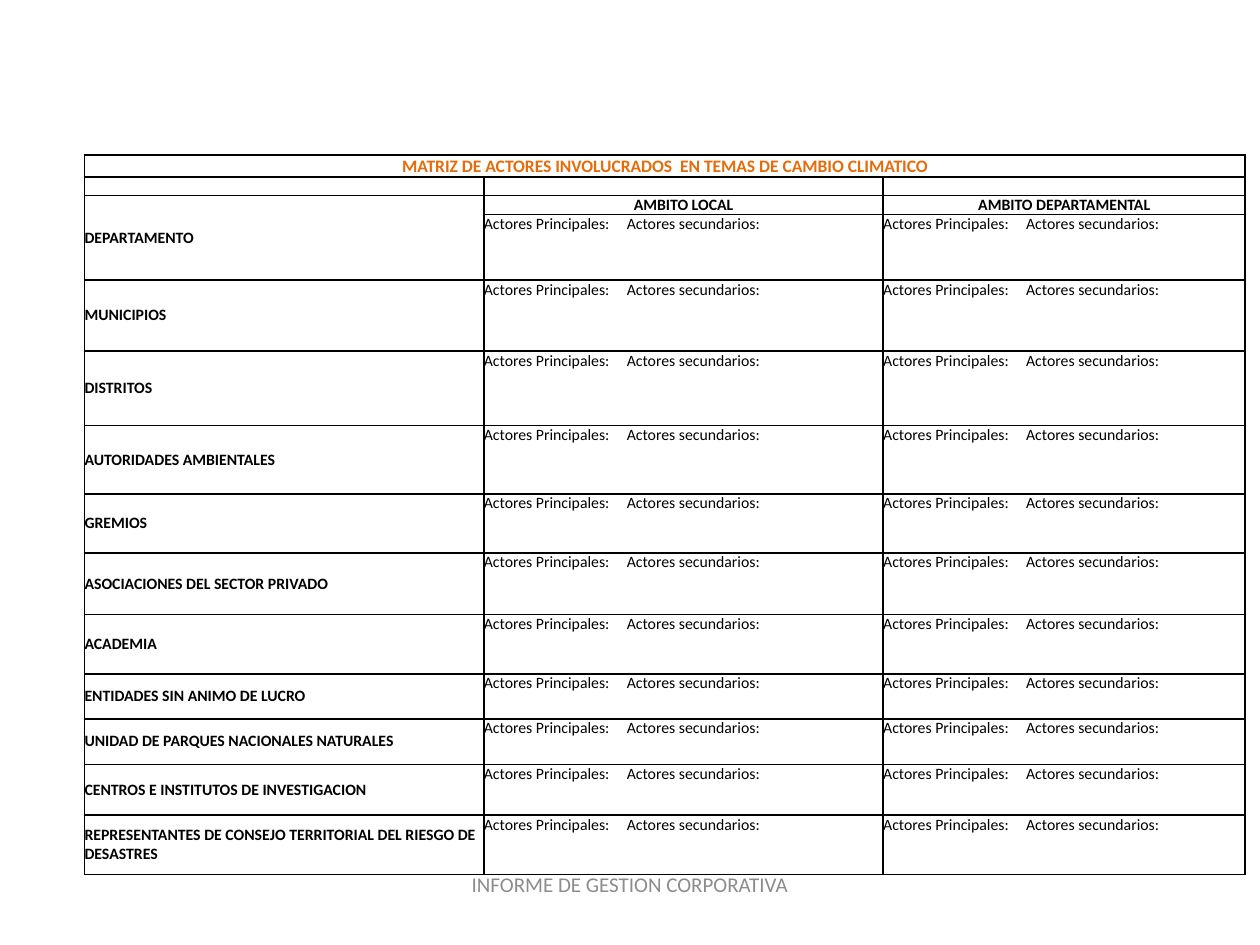
from lxml import etree
from pptx import Presentation
from pptx.dml.color import RGBColor
from pptx.enum.text import MSO_ANCHOR, PP_ALIGN
from pptx.oxml.ns import qn
from pptx.util import Pt

TOP, MIDDLE, BOTTOM = MSO_ANCHOR.TOP, MSO_ANCHOR.MIDDLE, MSO_ANCHOR.BOTTOM
LEFT, CENTER = PP_ALIGN.LEFT, PP_ALIGN.CENTER
COLORS = {"title": "E46C0A", "text": "000000", "border": "000000", "footer": "8C8C8C"}
FONT = "Calibri"

TITLE = "MATRIZ DE ACTORES INVOLUCRADOS  EN TEMAS DE CAMBIO CLIMATICO"
SCOPES = ["AMBITO LOCAL", "AMBITO DEPARTAMENTAL"]
ACTORS = "Actores Principales:\tActores secundarios:"
FOOTER = "INFORME DE GESTION CORPORATIVA"
GROUPS = [  # name, row height
    ("DEPARTAMENTO", 37.4),
    ("MUNICIPIOS", 40.6),
    ("DISTRITOS", 42.6),
    ("AUTORIDADES AMBIENTALES", 39.1),
    ("GREMIOS", 33.7),
    ("ASOCIACIONES DEL SECTOR PRIVADO", 35.1),
    ("ACADEMIA", 34),
    ("ENTIDADES SIN ANIMO DE LUCRO", 25.7),
    ("UNIDAD DE PARQUES NACIONALES NATURALES", 26),
    ("CENTROS E INSTITUTOS DE INVESTIGACION", 29.1),
    ("REPRESENTANTES DE CONSEJO TERRITORIAL DEL RIESGO DE DESASTRES", 34),
]
HEADER_HEIGHTS = [12.6, 10.6, 10.9]
COL_WIDTHS = [228.2, 228.2, 206.8]
TABLE_LEFT, TABLE_TOP = 48.3, 88.6
ACTOR_TAB = 81.7
SCOPE_ROW = 2
FIRST_GROUP_ROW = 3


def write(tf, text, size, color, bold=False, align=LEFT):
    p = tf.paragraphs[0]
    p.alignment = align
    r = p.add_run()
    r.text = text
    r.font.name, r.font.size, r.font.bold = FONT, Pt(size), bold
    r.font.color.rgb = RGBColor.from_string(COLORS[color])
    return p


def add_tab_stop(p, position):
    tabs = etree.SubElement(p._p.get_or_add_pPr(), qn("a:tabLst"))
    etree.SubElement(tabs, qn("a:tab"), pos=str(Pt(position)), algn="l")


def style_cell(cell):
    """Zero margins, thin border on every side, no fill."""
    cell.margin_left = cell.margin_right = cell.margin_top = cell.margin_bottom = 0
    tc_pr = cell._tc.get_or_add_tcPr()
    for side in ("a:lnL", "a:lnR", "a:lnT", "a:lnB"):
        ln = etree.SubElement(tc_pr, qn(side), w=str(Pt(1)))
        fill = etree.SubElement(ln, qn("a:solidFill"))
        etree.SubElement(fill, qn("a:srgbClr"), val=COLORS["border"])
    cell.fill.background()


def fill_cell(cell, text, anchor, size=9, color="text", bold=True, align=LEFT):
    cell.vertical_anchor = anchor
    return write(cell.text_frame, text, size, color, bold, align)


prs = Presentation()
prs.slide_width, prs.slide_height = Pt(720), Pt(540)
s = prs.slides.add_slide(prs.slide_layouts[6])

footer = s.shapes.add_textbox(Pt(246), Pt(491), Pt(228), Pt(28.8))
footer.text_frame.word_wrap = True
footer.text_frame.vertical_anchor = MIDDLE
write(footer.text_frame, FOOTER, 12, "footer", align=CENTER)

heights = HEADER_HEIGHTS + [h for _, h in GROUPS]
table = s.shapes.add_table(len(heights), len(COL_WIDTHS), Pt(TABLE_LEFT), Pt(TABLE_TOP),
                           Pt(sum(COL_WIDTHS)), Pt(sum(heights))).table
table.first_row = table.horz_banding = False
for col, width in zip(table.columns, COL_WIDTHS):
    col.width = Pt(width)
for row, height in zip(table.rows, heights):
    row.height = Pt(height)
for cell in table.iter_cells():
    style_cell(cell)
    # Empty cells must not grow their row
    end = etree.SubElement(cell.text_frame.paragraphs[0]._p, qn("a:endParaRPr"))
    end.set("sz", "800")

table.cell(0, 0).merge(table.cell(0, 2))
table.cell(SCOPE_ROW, 0).merge(table.cell(FIRST_GROUP_ROW, 0))
fill_cell(table.cell(0, 0), TITLE, BOTTOM, size=10, color="title", align=CENTER)
for c, scope in enumerate(SCOPES, 1):
    fill_cell(table.cell(SCOPE_ROW, c), scope, BOTTOM, align=CENTER)
for i, (name, _) in enumerate(GROUPS):
    row = FIRST_GROUP_ROW + i
    name_row = row if i else SCOPE_ROW
    fill_cell(table.cell(name_row, 0), name, MIDDLE)
    for c in range(1, len(COL_WIDTHS)):
        add_tab_stop(fill_cell(table.cell(row, c), ACTORS, TOP, bold=False), ACTOR_TAB)

prs.save("out.pptx")
